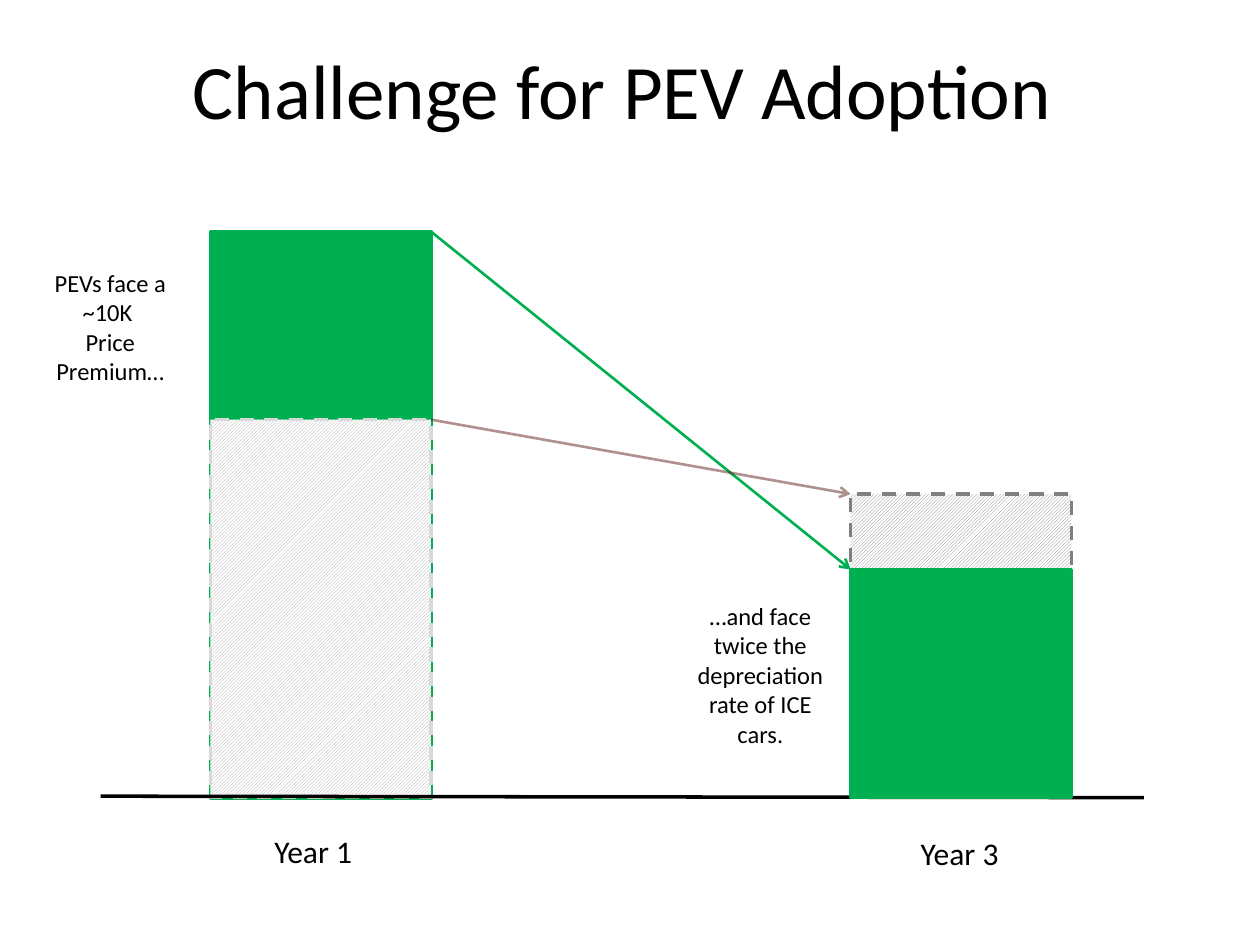
import pptx
import pptx.dml.color
import pptx.enum.dml
import pptx.enum.shapes
import pptx.enum.text
import pptx.oxml
import pptx.oxml.ns
import pptx.util
from pptx.util import Cm

DASH = pptx.enum.dml.MSO_LINE.DASH
PATTERN = pptx.enum.dml.MSO_PATTERN
ALIGN = pptx.enum.text.PP_ALIGN
GREEN, GREY, BLACK = "00B050", "808080", "000000"


def rgb(color):
    return pptx.dml.color.RGBColor.from_string(color)


def add_xml(parent, tag, **attributes):
    child = pptx.oxml.parse_xml(f"<a:{tag} {pptx.oxml.ns.nsdecls('a')}/>")
    for name, value in attributes.items():
        child.set(name, value)
    parent.append(child)


class Board:
    """Holds the font and the current slide."""
    font = "Calibri"

    def __init__(self, slide):
        self.slide = slide

    def format_text(self, frame, size, align):
        for paragraph in frame.paragraphs:
            paragraph.alignment = align
            for run in paragraph.runs:
                run.font.name = self.font
                run.font.size = pptx.util.Pt(size)
                run.font.color.rgb = rgb(BLACK)

    def title(self, text, left, top, width, height):
        title = self.slide.shapes.title
        title.left, title.top = Cm(left), Cm(top)
        title.width, title.height = Cm(width), Cm(height)
        title.text_frame.text = text
        title.text_frame.vertical_anchor = pptx.enum.text.MSO_ANCHOR.MIDDLE
        self.format_text(title.text_frame, 44, ALIGN.CENTER)

    def text(self, text, left, top, width, height, size=14,
             align=ALIGN.CENTER, wrap=True):
        frame = self.slide.shapes.add_textbox(
            Cm(left), Cm(top), Cm(width), Cm(height)).text_frame
        frame.word_wrap = wrap
        frame.auto_size = pptx.enum.text.MSO_AUTO_SIZE.SHAPE_TO_FIT_TEXT
        frame.text = text
        self.format_text(frame, size, align)

    def bar(self, left, top, height, fill, line, pattern=None):
        bar = self.slide.shapes.add_shape(
            pptx.enum.shapes.MSO_SHAPE.RECTANGLE,
            Cm(left), Cm(top), Cm(BAR_WIDTH), Cm(height))
        bar.shadow.inherit = False
        bar.line.color.rgb = rgb(line)
        bar.line.width = pptx.util.Pt(2)
        if pattern is None:
            bar.fill.solid()
            bar.fill.fore_color.rgb = rgb(fill)
        else:
            bar.fill.patterned()
            bar.fill.pattern = pattern
            bar.fill.fore_color.rgb = rgb(fill)
            bar.fill.back_color.rgb = rgb("FFFFFF")
            bar.line.dash_style = DASH

    def line(self, start, end, color, width, arrow=False, opacity=None):
        line = self.slide.shapes.add_connector(
            pptx.enum.shapes.MSO_CONNECTOR.STRAIGHT,
            *(Cm(value) for value in (*start, *end)))
        line.line.color.rgb = rgb(color)
        line.line.width = pptx.util.Pt(width)
        properties = line.line._get_or_add_ln()
        if opacity is not None:
            add_xml(properties.find(".//" + pptx.oxml.ns.qn("a:srgbClr")),
                    "alpha", val=str(opacity * 1000))
        if arrow:
            add_xml(properties, "tailEnd", type="arrow")
        add_xml(line._element.spPr, "effectLst")


# Bar edges and value levels, in cm
BAR_WIDTH = 4.45
YEAR_1, YEAR_3 = 4.24, 17.15
YEAR_1_RIGHT = YEAR_1 + BAR_WIDTH
PEV_START, PEV_END = 4.67, 11.48
ICE_START, ICE_END = 8.46, 9.96
BASE = 16.08

presentation = pptx.Presentation()
presentation.slide_width, presentation.slide_height = Cm(25.4), Cm(19.05)
board = Board(presentation.slides.add_slide(presentation.slide_layouts[5]))

board.title("Challenge for PEV Adoption", 1.12, 0.2, 22.86, 3.18)

# Year 1: ICE price in front of the PEV price
board.bar(YEAR_1, PEV_START, 11.43, GREEN, GREEN)
board.bar(YEAR_1, ICE_START, BASE - ICE_START, "A6A6A6", "D9D9D9",
          PATTERN.DARK_UPWARD_DIAGONAL)

# Baseline
board.line((2.03, 16.05), (23.06, BASE), BLACK, 2)

# Year 3: PEV value in front of the ICE value
board.bar(YEAR_3, ICE_END, 6.1, GREY, GREY, PATTERN.LIGHT_UPWARD_DIAGONAL)
board.bar(YEAR_3, PEV_END, BASE - PEV_END, GREEN, GREEN)

# Depreciation arrows
board.line((YEAR_1_RIGHT, PEV_START), (YEAR_3, PEV_END), GREEN, 1.5,
           arrow=True)
board.line((YEAR_1_RIGHT, ICE_START), (YEAR_3, ICE_END), "632523", 1.5,
           arrow=True, opacity=50)

# Comments and year labels
board.text("PEVs face a ~10K \nPrice Premium…", 0.84, 5.28, 2.77, 2.64)
board.text("…and face twice the depreciation rate of ICE cars.",
           13.74, 11.99, 3.18, 3.25)
for label, left, top in (("Year 1", 5.28, 16.64), ("Year 3", 18.31, 16.69)):
    board.text(label, left, top, 2.12, 1.02, 18, ALIGN.LEFT, wrap=False)

presentation.save("out.pptx")
